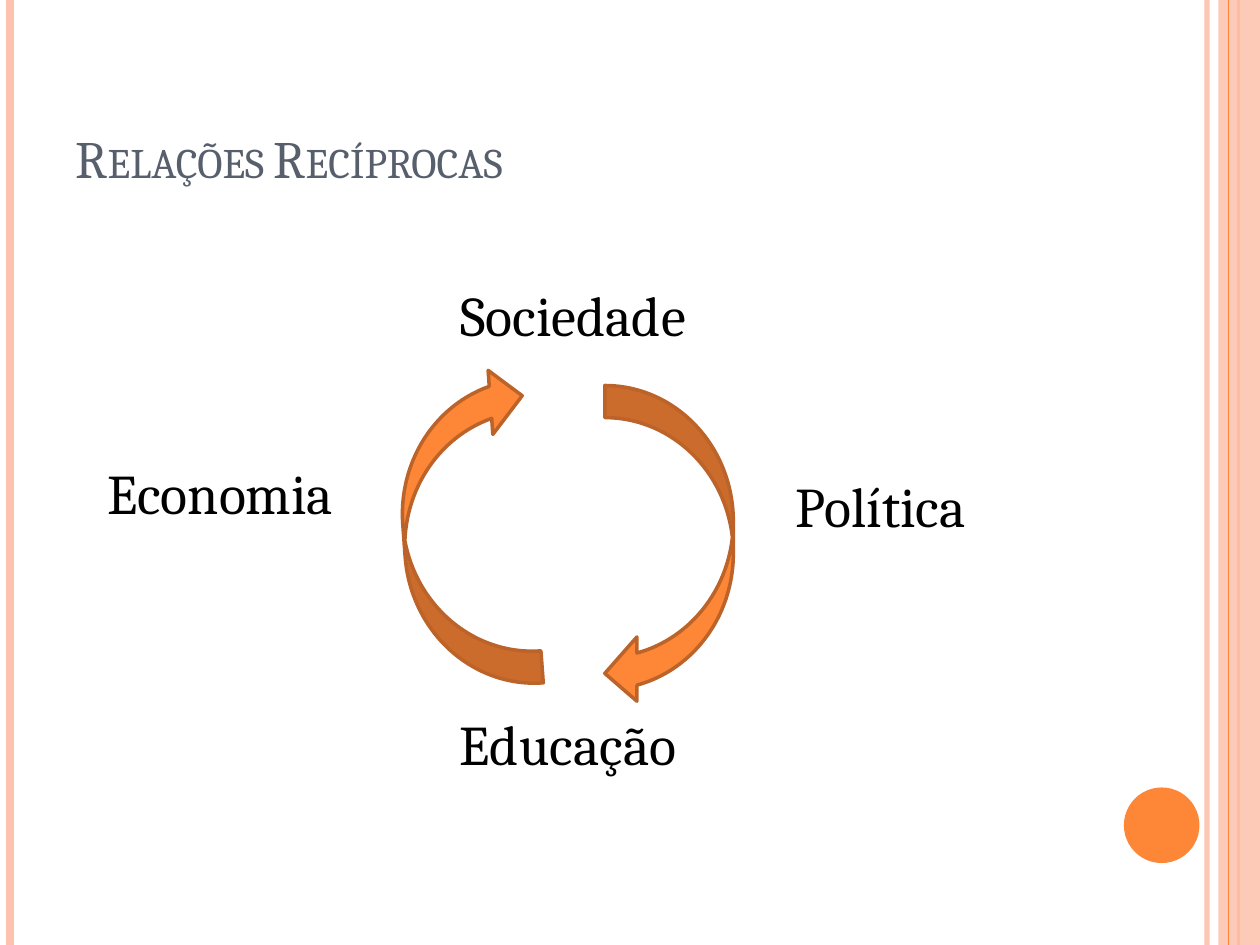
from dataclasses import dataclass

from lxml import etree
from pptx import Presentation
from pptx import util as u
from pptx.dml.color import RGBColor
from pptx.enum import shapes, text
from pptx.oxml.ns import qn

COLUMNS, ROWS = 100, 75


@dataclass(frozen=True)
class Theme:
    font: str = "Cambria"
    accent: str = "FE8637"
    pale: str = "FEC3AE"
    outline: str = "BC6329"
    heading: str = "575F6D"
    body: str = "000000"
    title_size: int = 30
    label_size: int = 32


class SlideBuilder:
    """Places elements on a grid of COLUMNS by ROWS cells."""

    def __init__(self, prs, theme):
        self.theme = theme
        self.column = prs.slide_width / COLUMNS
        self.row = prs.slide_height / ROWS
        self.slide = prs.slides.add_slide(prs.slide_layouts[5])

    def box(self, left, top, width, height):
        return (round(left * self.column), round(top * self.row),
                round(width * self.column), round(height * self.row))

    def paint(self, fill, color, opacity=100):
        fill.solid()
        fill.fore_color.rgb = RGBColor.from_string(color)
        if opacity < 100:
            solid = fill._xPr.find(qn("a:solidFill"))
            etree.SubElement(solid[0], qn("a:alpha"), val=str(opacity * 1000))

    def style_text(self, frame, size, color):
        font = frame.paragraphs[0].runs[0].font
        font.name = self.theme.font
        font.size = u.Pt(size)
        font.color.rgb = RGBColor.from_string(color)
        return font

    def title(self, words, *cells):
        heading = self.slide.shapes.title
        heading.left, heading.top, heading.width, heading.height = self.box(*cells)
        frame = heading.text_frame
        frame.text = words
        frame.word_wrap = True
        frame.auto_size = text.MSO_AUTO_SIZE.NONE
        frame.vertical_anchor = text.MSO_ANCHOR.BOTTOM
        frame.paragraphs[0].alignment = text.PP_ALIGN.LEFT
        font = self.style_text(frame, self.theme.title_size, self.theme.heading)
        font._element.set("cap", "small")

    def label(self, words, *cells):
        frame = self.slide.shapes.add_textbox(*self.box(*cells)).text_frame
        frame.text = words
        frame.word_wrap = False
        frame.auto_size = text.MSO_AUTO_SIZE.SHAPE_TO_FIT_TEXT
        frame.paragraphs[0].alignment = text.PP_ALIGN.CENTER
        self.style_text(frame, self.theme.label_size, self.theme.body)

    def stripe(self, column, color, weight, opacity=100):
        """Draws a vertical line over the full height of the slide."""
        x, top, _, bottom = self.box(column, 0, 0, ROWS)
        line = self.slide.shapes.add_connector(
            shapes.MSO_CONNECTOR.STRAIGHT, x, top, x, bottom)
        line.line.width = u.Pt(weight)
        self.paint(line.line.fill, color, opacity)
        etree.SubElement(line._element.spPr, qn("a:effectLst"))

    def shape(self, kind, *cells, fill, opacity=100, outline=None, rotation=0):
        item = self.slide.shapes.add_shape(kind, *self.box(*cells))
        item.shadow.inherit = False
        item.rotation = rotation
        self.paint(item.fill, fill, opacity)
        if outline:
            item.line.width = u.Pt(2)
            self.paint(item.line.fill, outline)
        else:
            item.line.fill.background()


def main():
    prs = Presentation()
    prs.slide_width, prs.slide_height = u.Inches(10), u.Inches(7.5)
    theme = Theme()
    page = SlideBuilder(prs, theme)
    kinds = shapes.MSO_SHAPE

    page.stripe(95.8, theme.pale, 3, opacity=93)
    page.stripe(0.8, theme.pale, 4.5)
    page.stripe(98.3, theme.accent, 1.5)
    page.shape(kinds.RECTANGLE, 96.7, 0, 3.3, ROWS, fill=theme.pale, opacity=87)
    page.stripe(97.5, theme.accent, 0.75)
    page.shape(kinds.OVAL, 89.2, 62.5, 6, 6, fill=theme.accent)

    page.title("Relações Recíprocas", 5, 3, 81.7, 12.5)

    for words, left, top, width in (
        ("Sociedade", 34.2, 21.8, 22.6),
        ("Economia", 6.3, 35.9, 22.4),
        ("Política", 61, 36.9, 17.8),
        ("Educação", 34.2, 55.8, 21.8),
    ):
        page.label(words, left, top, width, 6.4)

    for left, top, rotation in ((48, 30.6, 0), (32, 29.2, 175.8)):
        page.shape(kinds.CURVED_LEFT_ARROW, left, top, 10.2, 25.4,
                   fill=theme.accent, outline=theme.outline, rotation=rotation)

    prs.save("out.pptx")


if __name__ == "__main__":
    main()
